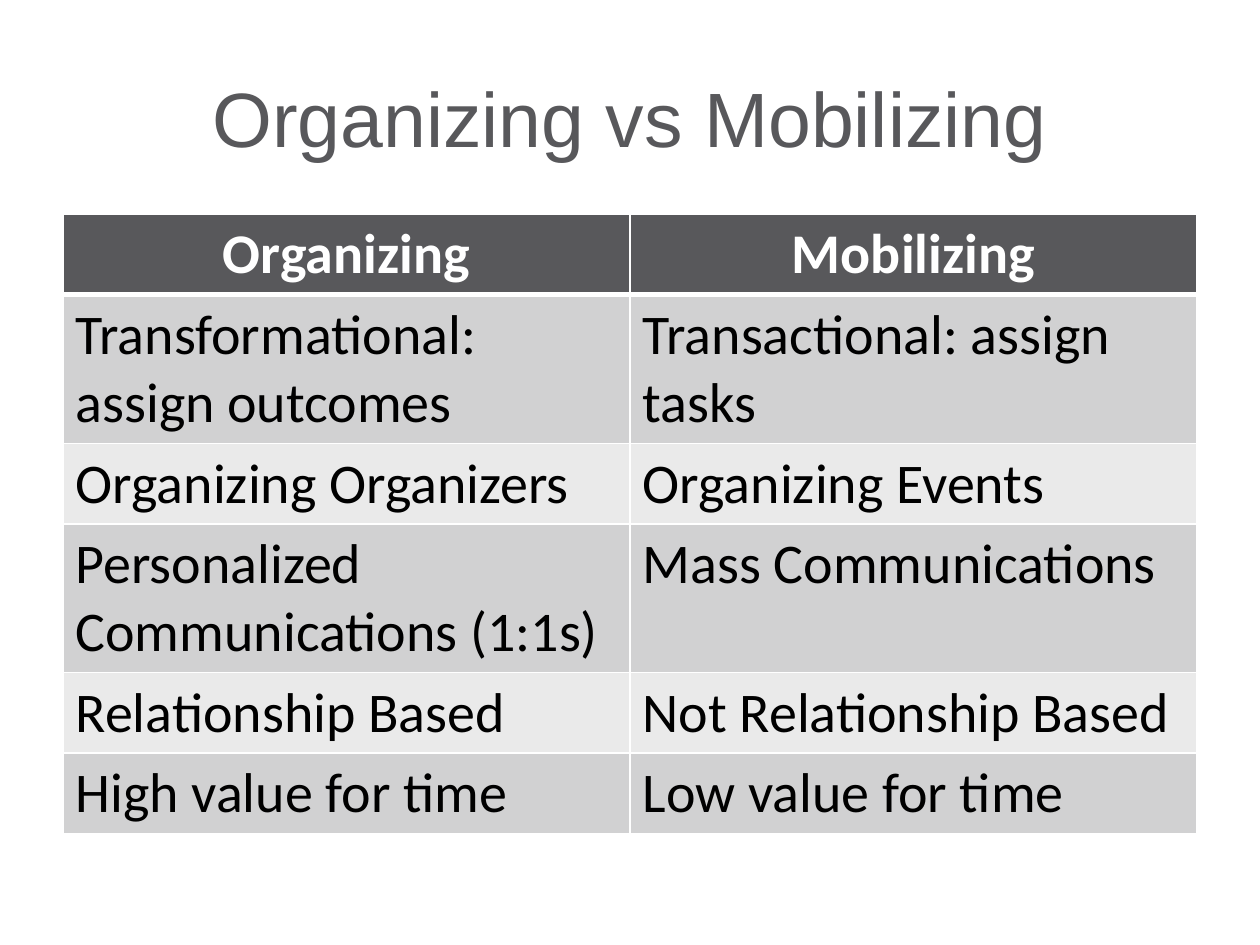
from lxml import etree
from pptx import Presentation
from pptx.dml.color import RGBColor
from pptx.enum.text import MSO_ANCHOR, PP_ALIGN
from pptx.oxml.ns import qn
from pptx.util import Pt

CENTER, LEFT = PP_ALIGN.CENTER, PP_ALIGN.LEFT
MIDDLE = MSO_ANCHOR.MIDDLE

WHITE = RGBColor(0xFF, 0xFF, 0xFF)
BLACK = RGBColor(0x00, 0x00, 0x00)
CHARCOAL = RGBColor(0x58, 0x58, 0x5B)
DARK_BAND = RGBColor(0xD1, 0xD1, 0xD2)
LIGHT_BAND = RGBColor(0xEA, 0xEA, 0xEA)

ROWS = [
    ("Organizing", "Mobilizing"),
    ("Transformational: assign outcomes", "Transactional: assign tasks"),
    ("Organizing Organizers", "Organizing Events"),
    ("Personalized Communications (1:1s)", "Mass Communications"),
    ("Relationship Based", "Not Relationship Based"),
    ("High value for time", "Low value for time"),
]
ROW_HEIGHTS = [46, 85, 46, 85, 46, 46]


def write(frame, text, *, font, size, color, bold=False, align=LEFT, after=0):
    para = frame.paragraphs[0]
    para.alignment = align
    para.space_after = Pt(after)
    span = para.add_run()
    span.text = text
    span.font.name = font
    span.font.size = Pt(size)
    span.font.bold = bold
    span.font.color.rgb = color


def set_borders(cell, **widths):
    """Draw white cell borders; keys are L, R, T and B, widths are in points."""
    properties = cell._tc.get_or_add_tcPr()
    for side, width in widths.items():
        line = etree.SubElement(properties, qn(f"a:ln{side}"), w=str(Pt(width)))
        fill = etree.SubElement(line, qn("a:solidFill"))
        etree.SubElement(fill, qn("a:srgbClr"), val=str(WHITE))


deck = Presentation()
deck.slide_width, deck.slide_height = Pt(720), Pt(540)
page = deck.slides.add_slide(deck.slide_layouts[6])

title = page.shapes.add_textbox(Pt(36), Pt(21.6), Pt(648), Pt(90)).text_frame
title.word_wrap = True
title.vertical_anchor = MIDDLE
write(title, "Organizing vs Mobilizing", font="Arial", size=44, color=CHARCOAL, align=CENTER)

table = page.shapes.add_table(
    len(ROWS), 2, Pt(36), Pt(122.4), Pt(648), Pt(sum(ROW_HEIGHTS))
).table

for row, (texts, height) in enumerate(zip(ROWS, ROW_HEIGHTS)):
    table.rows[row].height = Pt(height)
    header = row == 0
    band = CHARCOAL if header else DARK_BAND if row % 2 else LIGHT_BAND
    for column, text in enumerate(texts):
        cell = table.cell(row, column)
        set_borders(cell, L=1, R=1, T=3 if row == 1 else 1, B=3 if header else 1)
        cell.fill.solid()
        cell.fill.fore_color.rgb = band
        write(
            cell.text_frame, text, font="Calibri", size=32, bold=header,
            color=WHITE if header else BLACK,
            align=CENTER if header else LEFT, after=0 if header else 6,
        )

deck.save("out.pptx")
